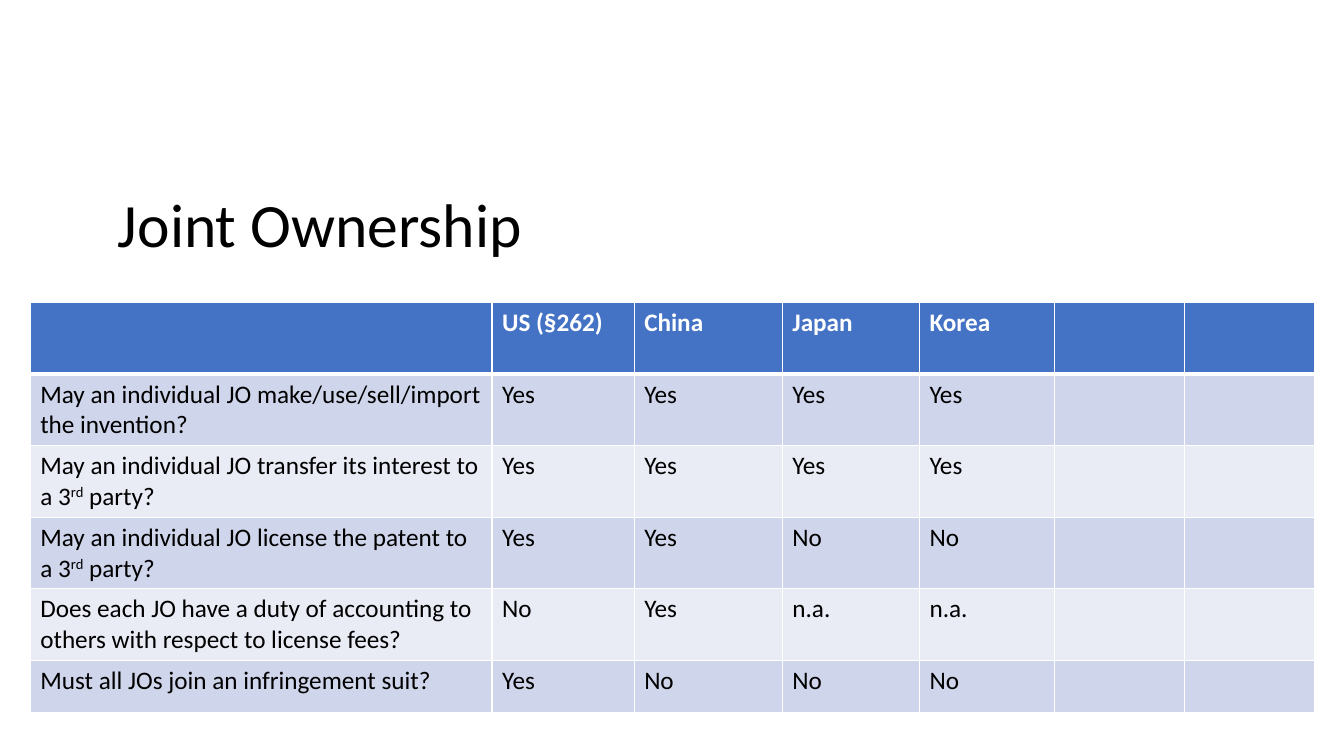
from lxml import etree
from pptx import Presentation
from pptx.dml.color import RGBColor
from pptx.enum import text
from pptx.oxml import ns
from pptx.util import Inches, Pt

BLACK = RGBColor(0x00, 0x00, 0x00)
WHITE = RGBColor(0xFF, 0xFF, 0xFF)
HEADER_BLUE = RGBColor(0x44, 0x72, 0xC4)
BANDS = (RGBColor(0xCF, 0xD5, 0xEA), RGBColor(0xE9, 0xEB, 0xF5))

COLUMN_WIDTHS = (4.58, 1.41, 1.47, 1.36, 1.34, 1.29, 1.29)
ROW_HEIGHTS = (0.71, 0.71, 0.71, 0.71, 0.71, 0.52)
ROWS = (
    ("", "US (§262)", "China", "Japan", "Korea", "", ""),
    ("May an individual JO make/use/sell/import the invention?",
     "Yes", "Yes", "Yes", "Yes", "", ""),
    ("May an individual JO transfer its interest to a 3^rd^ party?",
     "Yes", "Yes", "Yes", "Yes", "", ""),
    ("May an individual JO license the patent to a 3^rd^ party?",
     "Yes", "Yes", "No", "No", "", ""),
    ("Does each JO have a duty of accounting to others with respect to license fees?",
     "No", "Yes", "n.a.", "n.a.", "", ""),
    ("Must all JOs join an infringement suit?",
     "Yes", "No", "No", "No", "", ""),
)


def write_text(frame, content, size=18, color=BLACK, bold=False, spacing=1.0):
    """Write one left-aligned paragraph; text between carets is superscript."""
    paragraph = frame.paragraphs[0]
    paragraph.alignment = text.PP_ALIGN.LEFT
    paragraph.line_spacing = spacing
    for index, part in enumerate(content.split("^")):
        if not part:
            continue
        run = paragraph.add_run()
        run.text = part
        run.font.name = "Calibri"
        run.font.size = Pt(size)
        run.font.bold = bold
        run.font.color.rgb = color
        if index % 2:
            run.font._element.set("baseline", "30000")


def set_borders(cell, **widths):
    """Draw white cell borders with the given width in points per side."""
    properties = cell._tc.get_or_add_tcPr()
    for side, width in widths.items():
        line = etree.SubElement(properties, ns.qn(f"a:ln{side}"), w=str(Pt(width)))
        fill = etree.SubElement(line, ns.qn("a:solidFill"))
        etree.SubElement(fill, ns.qn("a:srgbClr"), val=str(WHITE))


def add_title(slide, content):
    """Place and fill the title placeholder."""
    title = slide.shapes.title
    title.left, title.top = Inches(1.07), Inches(1.87)
    title.width, title.height = Inches(11.5), Inches(0.78)
    frame = title.text_frame
    frame.auto_size = text.MSO_AUTO_SIZE.NONE
    frame.vertical_anchor = text.MSO_ANCHOR.MIDDLE
    write_text(frame, content, size=44, spacing=0.9)


def add_ownership_table(slide):
    """Add the banded table comparing joint ownership rules by country."""
    table = slide.shapes.add_table(
        len(ROWS), len(COLUMN_WIDTHS), Inches(0.3), Inches(3),
        Inches(sum(COLUMN_WIDTHS)), Inches(sum(ROW_HEIGHTS))).table
    for column, width in zip(table.columns, COLUMN_WIDTHS):
        column.width = Inches(width)
    for row_index, (row, height) in enumerate(zip(table.rows, ROW_HEIGHTS)):
        row.height = Inches(height)
        header = row_index == 0
        for cell, content in zip(row.cells, ROWS[row_index]):
            set_borders(cell, L=1, R=1, T=3 if row_index == 1 else 1,
                        B=3 if header else 1)
            cell.fill.solid()
            cell.fill.fore_color.rgb = (
                HEADER_BLUE if header else BANDS[(row_index - 1) % 2])
            write_text(cell.text_frame, content,
                       color=WHITE if header else BLACK, bold=header)


def main():
    """Build and save the joint ownership slide."""
    presentation = Presentation()
    presentation.slide_width = Inches(13.33)
    presentation.slide_height = Inches(7.5)
    slide = presentation.slides.add_slide(presentation.slide_layouts[5])
    add_title(slide, "Joint Ownership")
    add_ownership_table(slide)
    presentation.save("out.pptx")


if __name__ == "__main__":
    main()
